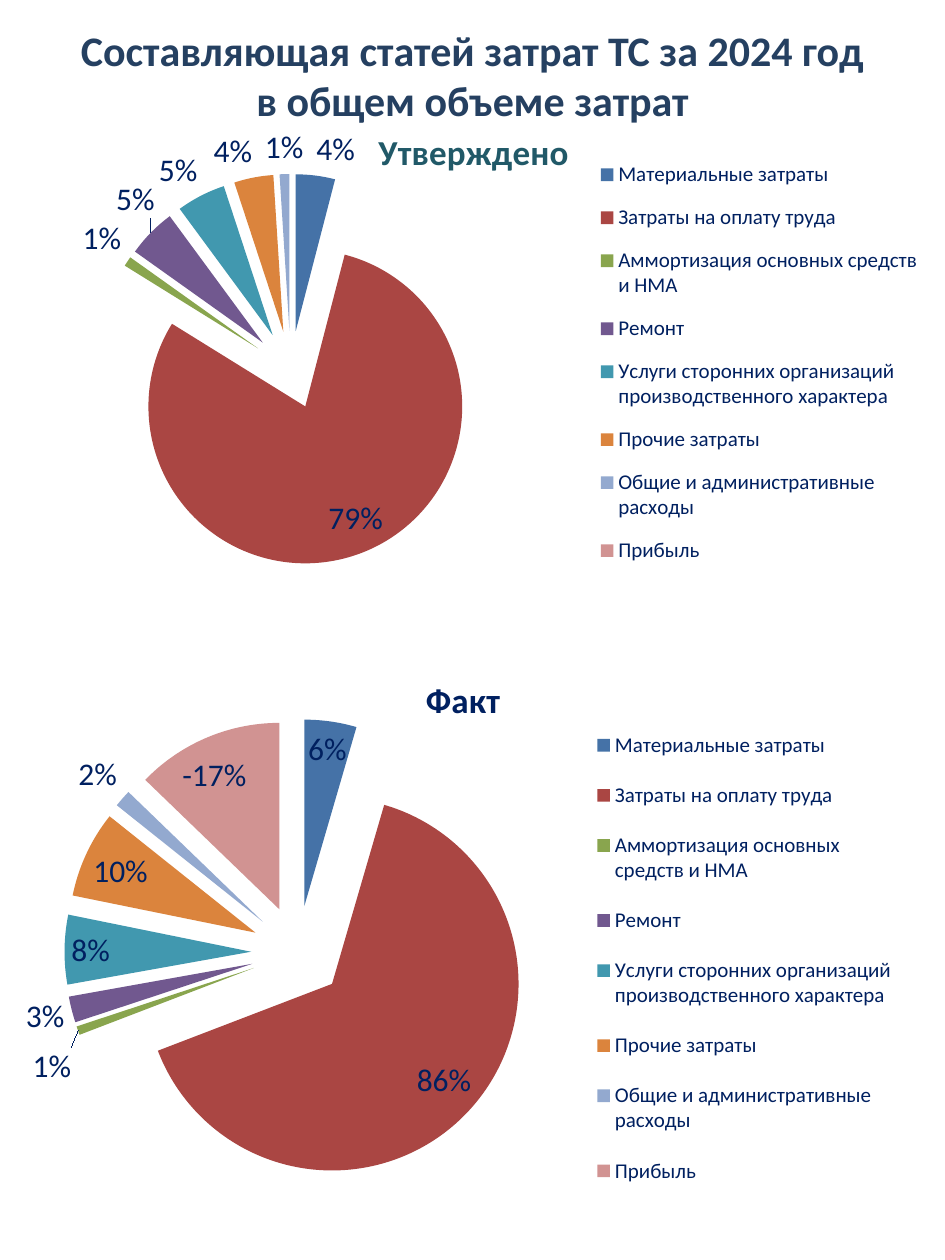
"""Build a slide with two exploded pie charts of cost shares, plan above fact."""
from dataclasses import dataclass

from pptx import Presentation
from pptx.chart.data import CategoryChartData as Data
from pptx.dml.color import RGBColor as Rgb
from pptx.enum.chart import XL_CHART_TYPE as Kind
from pptx.enum.chart import XL_LABEL_POSITION as Spot
from pptx.enum.chart import XL_LEGEND_POSITION as Side
from pptx.enum.text import MSO_ANCHOR as Anchor
from pptx.enum.text import PP_ALIGN as Align
from pptx.oxml import parse_xml
from pptx.oxml.ns import nsdecls, qn
from pptx.util import Inches, Pt


@dataclass(frozen=True)
class Theme:
    """Hold the font, colours and type sizes."""
    font: str = "Calibri"
    head: str = "254061"
    teal: str = "215968"
    navy: str = "002060"
    big: int = 24
    mid: int = 20
    label: int = 18
    small: int = 12
    pie: tuple = ("4572A7", "AA4643", "89A54E", "71588F",
                  "4198AF", "DB843D", "93A9CF", "D19392")


THEME = Theme()
WIDE, HIGH = 7.5, 10
BURST = 25
HEAD = "Составляющая статей затрат ТС за 2024 год\vв общем объеме затрат"
COSTS = [
    "Материальные затраты",
    "Затраты на оплату труда",
    "Аммортизация основных средств и НМА",
    "Ремонт",
    "Услуги сторонних организаций производственного характера",
    "Прочие затраты",
    "Общие и административные расходы",
    "Прибыль",
]
PIES = [
    {"name": "Утверждено", "color": THEME.teal,
     "vals": [0.04, 0.79, 0.01, 0.05, 0.05, 0.04, 0.01, 0],
     "box": (0.13, 0.83, 7.26, 3.94),
     "plot": (0, 0.14, 0.6, 0.79), "key": (0.64, 0.08, 0.35, 0.88)},
    {"name": "Факт", "color": THEME.navy,
     "vals": [0.06, 0.86, 0.01, 0.03, 0.08, 0.1, 0.02, -0.17],
     "box": (0.13, 5.16, 7.09, 4.57),
     "plot": (0.02, 0.12, 0.59, 0.81), "key": (0.64, 0.1, 0.35, 0.87)},
]


def style(font, size, color, bold=False):
    """Set the face, size, colour and weight of a font."""
    font.name, font.size, font.bold = THEME.font, Pt(size), bold
    font.color.rgb = Rgb.from_string(color)


def write(frame, text, size, color, bold=True):
    """Put centred, formatted text in a frame."""
    frame.text = text
    para = frame.paragraphs[0]
    para.alignment = Align.CENTER
    for run in para.runs:
        style(run.font, size, color, bold)


def layout(box, inner=False):
    """Return a manual layout element for shares of the chart's size."""
    target = '<c:layoutTarget val="inner"/>' if inner else ""
    modes = "".join(f'<c:{n}Mode val="edge"/>' for n in "xy")
    sizes = "".join(f'<c:{n} val="{v}"/>' for n, v in zip("xywh", box))
    return parse_xml(f'<c:layout {nsdecls("c")}><c:manualLayout>'
                     f"{target}{modes}{sizes}</c:manualLayout></c:layout>")


def place(node, box, inner=False):
    """Replace the layout of a plot area or legend."""
    for old in node.findall(qn("c:layout")):
        node.remove(old)
    spot = node.find(qn("c:legendPos"))
    if spot is None:
        node.insert(0, layout(box, inner))
    else:
        spot.addnext(layout(box, inner))


def hide(labels, index):
    """Drop the label of one slice."""
    labels.insert(index, parse_xml(
        f'<c:dLbl {nsdecls("c")}><c:idx val="{index}"/>'
        '<c:delete val="1"/></c:dLbl>'))


def draw(slide, pie):
    """Add one pie chart with its title, labels and legend."""
    data = Data(number_format="0%")
    data.categories = COSTS
    data.add_series(pie["name"], pie["vals"])
    box = [Inches(n) for n in pie["box"]]
    chart = slide.shapes.add_chart(Kind.PIE, *box, data).chart
    style(chart.font, THEME.small, THEME.navy)
    chart.has_title = True
    write(chart.chart_title.text_frame, pie["name"],
          size=THEME.mid, color=pie["color"])
    chart.chart_title.include_in_layout = False

    chart.has_legend = True
    key = chart.legend
    key.position, key.include_in_layout = Side.RIGHT, False
    style(key.font, THEME.small, THEME.navy)
    place(key._element, pie["key"])
    area = chart._chartSpace.chart.plotArea
    place(area, pie["plot"], inner=True)

    plot = chart.plots[0]
    plot.vary_by_categories = True
    row = plot.series[0]
    for i, color in enumerate(THEME.pie):
        fill = row.points[i].format.fill
        fill.solid()
        fill.fore_color.rgb = Rgb.from_string(color)
    row._element.find(qn("c:dPt")).addprevious(parse_xml(
        f'<c:explosion {nsdecls("c")} val="{BURST}"/>'))

    tags = row.data_labels
    tags.show_value, tags.position = True, Spot.BEST_FIT
    tags.number_format, tags.number_format_is_linked = "0%", False
    style(tags.font, THEME.label, THEME.navy)
    for i, val in enumerate(pie["vals"]):
        if not val:
            hide(row._element.find(qn("c:dLbls")), 0)
            row._element.find(qn("c:dLbls"))[0][0].set("val", str(i))


def main():
    """Make the deck and save it."""
    deck = Presentation()
    deck.slide_width, deck.slide_height = Inches(WIDE), Inches(HIGH)
    slide = deck.slides.add_slide(deck.slide_layouts[5])
    title = slide.shapes.title
    title.left, title.top = Inches(0.13), Inches(0.2)
    title.width, title.height = Inches(7.24), Inches(0.79)
    frame = title.text_frame
    frame.word_wrap, frame.vertical_anchor = True, Anchor.MIDDLE
    write(frame, HEAD, size=THEME.big, color=THEME.head)
    for pie in PIES:
        draw(slide, pie)
    deck.save("out.pptx")


if __name__ == "__main__":
    main()
